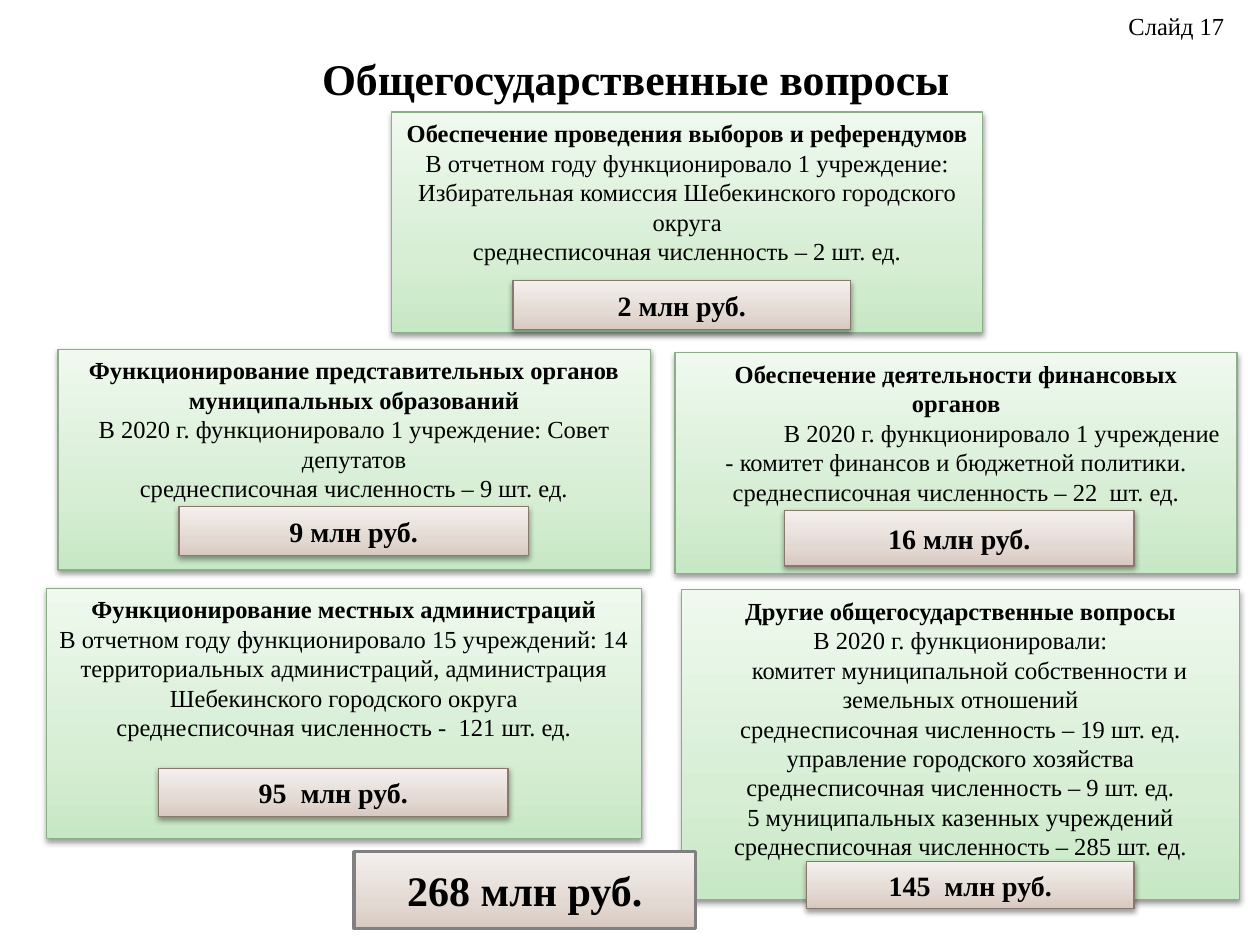
from copy import deepcopy

from pptx import Presentation
from pptx.dml.color import RGBColor
from pptx.enum.shapes import MSO_SHAPE
from pptx.enum.text import MSO_ANCHOR, PP_ALIGN
from pptx.oxml import parse_xml
from pptx.oxml.ns import nsdecls, qn
from pptx.util import Cm, Pt

FONT = "Times New Roman"
BLACK = RGBColor(0x00, 0x00, 0x00)
GRAY = RGBColor(0x80, 0x80, 0x80)
GREEN_LINE = RGBColor(0x8B, 0xAD, 0x88)
BROWN_LINE = RGBColor(0x8A, 0x78, 0x6D)
GREENS = [RGBColor(0xC7, 0xE8, 0xC4), RGBColor(0xD7, 0xEE, 0xD5), RGBColor(0xEF, 0xF9, 0xEE)]
BROWNS = [RGBColor(0xD7, 0xC9, 0xC1), RGBColor(0xE3, 0xD9, 0xD3), RGBColor(0xF4, 0xF0, 0xEE)]
STOPS = [0, 0.35, 1]
SHADOW = (
    f'<a:outerShdw {nsdecls("a")} blurRad="40000" dist="20000" dir="5400000" rotWithShape="0">'
    '<a:srgbClr val="000000"><a:alpha val="38000"/></a:srgbClr></a:outerShdw>'
)


def write(tf, lines, size, bold, align=PP_ALIGN.CENTER):
    tf.text = "\n".join(lines)
    for p in tf.paragraphs:
        p.alignment = align
        for r in p.runs:
            r.font.name = FONT
            r.font.size = Pt(size)
            r.font.bold = bold
            r.font.color.rgb = BLACK


def add_panel(place, colors, line_color, line_width, shadow):
    sp = s.shapes.add_shape(MSO_SHAPE.RECTANGLE, *[Cm(v) for v in place])
    sp.fill.gradient()
    sp.fill.gradient_angle = 90
    last = sp._element.spPr.findall(".//" + qn("a:gs"))[-1]
    last.addnext(deepcopy(last))
    for stop, position, color in zip(sp.fill.gradient_stops, STOPS, colors):
        stop.position = position
        stop.color.rgb = color
    sp.line.color.rgb = line_color
    sp.line.width = Pt(line_width)
    sp.shadow.inherit = False
    if shadow:
        sp._element.spPr.find(qn("a:effectLst")).append(parse_xml(SHADOW))
    sp.text_frame.word_wrap = True
    return sp


prs = Presentation()
prs.slide_width = Cm(25.4)
prs.slide_height = Cm(19.05)
s = prs.slides.add_slide(prs.slide_layouts[5])

title = s.shapes.title
title.left, title.top, title.width, title.height = Cm(2.11), Cm(0.51), Cm(21.41), Cm(2.11)
title.text_frame.vertical_anchor = MSO_ANCHOR.MIDDLE
write(title.text_frame, ["Общегосударственные вопросы"], 25, True)

sections = [
    ((13.74, 11.89, 11.25, 6.25), [
        "Другие общегосударственные вопросы",
        "В 2020 г. функционировали:",
        "комитет муниципальной собственности и земельных отношений",
        "среднесписочная численность – 19 шт. ед.",
        "управление городского хозяйства",
        "среднесписочная численность – 9 шт. ед.",
        "5 муниципальных казенных учреждений",
        "среднесписочная численность – 285 шт. ед.",
    ], {2: 0.37}, (16.26, 17.37, 6.6, 0.94), "145  млн руб."),
    ((7.9, 2.26, 11.91, 4.45), [
        "Обеспечение проведения выборов и референдумов",
        "В отчетном году функционировало 1 учреждение: "
        "Избирательная комиссия Шебекинского городского округа",
        "среднесписочная численность – 2 шт. ед.",
    ], {}, (10.34, 5.66, 6.81, 0.99), "2 млн руб."),
    ((0.94, 11.86, 11.99, 5.05), [
        "Функционирование местных администраций",
        "В отчетном году функционировало 15 учреждений: 14 территориальных "
        "администраций, администрация Шебекинского городского округа",
        "среднесписочная численность -  121 шт. ед.",
    ], {}, (3.2, 15.49, 7.04, 0.97), "95  млн руб."),
    ((13.61, 7.11, 11.33, 4.45), [
        "Обеспечение деятельности финансовых органов",
        "В 2020 г. функционировало 1 учреждение - комитет финансов и бюджетной политики.",
        "среднесписочная численность – 22  шт. ед.",
    ], {1: 1.85}, (15.82, 10.29, 7.04, 1.12), "16 млн руб."),
    ((1.17, 7.04, 11.94, 4.45), [
        "Функционирование представительных органов муниципальных образований",
        "В 2020 г. функционировало 1 учреждение: Совет депутатов",
        "среднесписочная численность – 9 шт. ед.",
    ], {}, (3.61, 10.21, 7.04, 0.99), "9 млн руб."),
]

for place, lines, indents, amount_place, amount in sections:
    sp = add_panel(place, GREENS, GREEN_LINE, 0.75, True)
    tf = sp.text_frame
    tf.vertical_anchor = MSO_ANCHOR.TOP
    write(tf, lines, 14, False)
    tf.paragraphs[0].runs[0].font.bold = True
    for i, indent in indents.items():
        tf.paragraphs[i]._p.get_or_add_pPr().set("indent", str(Cm(indent)))

    sp = add_panel(amount_place, BROWNS, BROWN_LINE, 0.75, True)
    write(sp.text_frame, [amount], 16, True)

number = s.shapes.add_textbox(Cm(22.5), Cm(0.1), Cm(2.5), Cm(0.86))
write(number.text_frame, ["Слайд 17"], 14, False, PP_ALIGN.LEFT)

total = add_panel((7.14, 17.17, 6.88, 1.55), BROWNS, GRAY, 2, False)
write(total.text_frame, ["268 млн руб."], 24, True)

prs.save("out.pptx")
